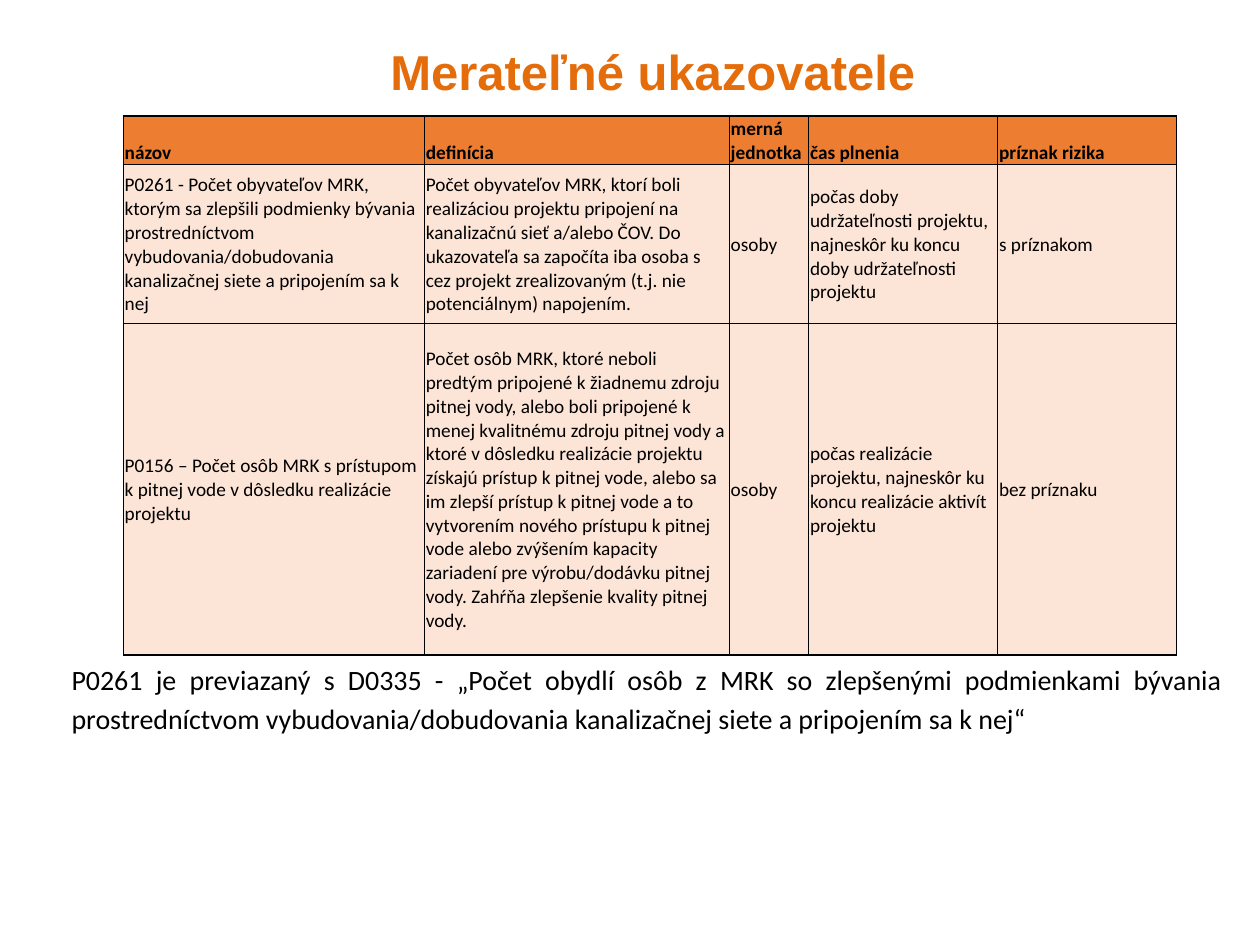
import dataclasses

import pptx
import pptx.dml.color
import pptx.enum.text
import pptx.oxml
import pptx.oxml.ns
import pptx.util

Inches = pptx.util.Inches
Pt = pptx.util.Pt
RGBColor = pptx.dml.color.RGBColor
ALIGN = pptx.enum.text.PP_ALIGN
ANCHOR = pptx.enum.text.MSO_ANCHOR

TITLE_ORANGE = RGBColor(0xE4, 0x6C, 0x0A)
HEADER_ORANGE = RGBColor(0xED, 0x7D, 0x31)
PEACH = RGBColor(0xFC, 0xE4, 0xD6)
BLACK = RGBColor(0, 0, 0)

COL_WIDTHS = (2.39, 2.42, 0.63, 1.5, 1.42)
ROW_HEIGHTS = (0.36, 1.26, 2.63)
THIN, THICK = 0.5, 1


@dataclasses.dataclass
class Indicator:
    name: str
    definition: str
    unit: str
    due: str
    risk: str


ROWS = (
    Indicator("názov", "definícia", "merná jednotka", "čas plnenia", "príznak rizika"),
    Indicator(
        "P0261 - Počet obyvateľov MRK, ktorým sa zlepšili podmienky bývania "
        "prostredníctvom vybudovania/dobudovania kanalizačnej siete a pripojením sa k nej",
        "Počet obyvateľov MRK, ktorí boli realizáciou projektu pripojení na kanalizačnú "
        "sieť a/alebo ČOV. Do ukazovateľa sa započíta iba osoba s cez projekt "
        "zrealizovaným (t.j. nie potenciálnym) napojením.",
        "osoby",
        "počas doby udržateľnosti projektu, najneskôr ku koncu doby udržateľnosti projektu",
        "s príznakom",
    ),
    Indicator(
        "P0156 – Počet osôb MRK s prístupom k pitnej vode v dôsledku realizácie projektu",
        "Počet osôb MRK, ktoré neboli predtým pripojené k žiadnemu zdroju pitnej vody, "
        "alebo boli pripojené k menej kvalitnému zdroju pitnej vody a ktoré v dôsledku "
        "realizácie projektu získajú prístup k pitnej vode, alebo sa im zlepší prístup "
        "k pitnej vode a to vytvorením nového prístupu k pitnej vode alebo zvýšením "
        "kapacity zariadení pre výrobu/dodávku pitnej vody. Zahŕňa zlepšenie kvality "
        "pitnej vody.",
        "osoby",
        "počas realizácie projektu, najneskôr ku koncu realizácie aktivít projektu",
        "bez príznaku",
    ),
)
NOTE = (
    "P0261 je previazaný s D0335 - „Počet obydlí osôb z MRK so zlepšenými podmienkami "
    "bývania prostredníctvom vybudovania/dobudovania kanalizačnej siete a pripojením "
    "sa k nej“"
)


def apply(target, values: dict) -> None:
    for key, value in values.items():
        setattr(target, key, value)


def write(tf, text: str, size: float, font: str, color, bold: bool, **paragraph) -> None:
    p = tf.paragraphs[0]
    apply(p, paragraph)
    r = p.add_run()
    r.text = text
    apply(r.font, {"size": Pt(size), "name": font, "bold": bold})
    r.font.color.rgb = color


def set_borders(cell, widths: dict) -> None:
    tc_pr = cell._tc.get_or_add_tcPr()
    for i, (side, width) in enumerate(widths.items()):
        line = pptx.oxml.parse_xml(
            f'<a:ln{side} {pptx.oxml.ns.nsdecls("a")} w="{Pt(width)}">'
            f'<a:solidFill><a:srgbClr val="{BLACK}"/></a:solidFill></a:ln{side}>'
        )
        tc_pr.insert(i, line)


def add_indicator_table(s) -> None:
    last_row, last_col = len(ROW_HEIGHTS) - 1, len(COL_WIDTHS) - 1
    table = s.shapes.add_table(
        len(ROW_HEIGHTS), len(COL_WIDTHS), Inches(0.98), Inches(0.92),
        Inches(sum(COL_WIDTHS)), Inches(sum(ROW_HEIGHTS)),
    ).table
    for col, width in zip(table.columns, COL_WIDTHS):
        col.width = Inches(width)
    for i, (height, row) in enumerate(zip(ROW_HEIGHTS, ROWS)):
        table.rows[i].height = Inches(height)
        header = i == 0
        for j, text in enumerate(dataclasses.astuple(row)):
            cell = table.cell(i, j)
            apply(cell, {
                "margin_left": Inches(0.01), "margin_right": Inches(0.01),
                "margin_top": Inches(0.01), "margin_bottom": 0,
                "vertical_anchor": ANCHOR.BOTTOM if header else ANCHOR.MIDDLE,
            })
            cell.fill.solid()
            cell.fill.fore_color.rgb = HEADER_ORANGE if header else PEACH
            write(cell.text_frame, text, 11, "Calibri", BLACK, header)
            # Thick frame outside, thin grid inside
            set_borders(cell, {
                "L": THICK if j == 0 else THIN,
                "R": THICK if j == last_col else THIN,
                "T": THICK if header else THIN,
                "B": THICK if i == last_row else THIN,
            })


def main() -> None:
    prs = pptx.Presentation()
    apply(prs, {"slide_width": Inches(10), "slide_height": Inches(7.5)})
    s = prs.slides.add_slide(prs.slide_layouts[5])

    # Title
    title = s.shapes.title
    apply(title, {"left": Inches(0.56), "top": Inches(0.26),
                  "width": Inches(9.24), "height": Inches(0.6)})
    title.text_frame.vertical_anchor = ANCHOR.MIDDLE
    write(title.text_frame, "Merateľné ukazovatele", 28, "Arial", TITLE_ORANGE, True,
          alignment=ALIGN.CENTER)

    # Indicators
    add_indicator_table(s)

    # Note under the table
    note = s.shapes.add_textbox(Inches(0.47), Inches(5.17), Inches(9.33), Inches(0.75))
    note.text_frame.word_wrap = True
    write(note.text_frame, NOTE, 16, "Calibri", BLACK, False,
          alignment=ALIGN.JUSTIFY, line_spacing=1.15)

    prs.save("out.pptx")


if __name__ == "__main__":
    main()
